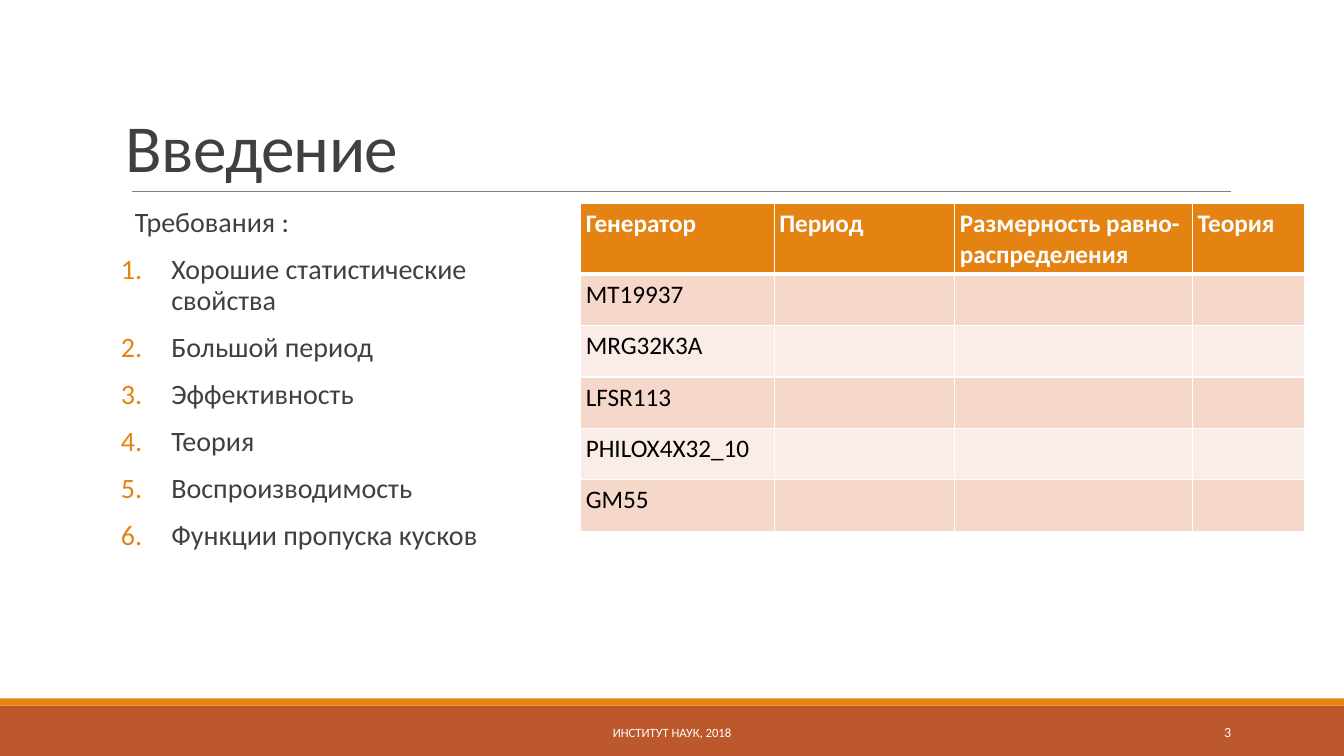
import dataclasses

import pptx
import pptx.dml.color
import pptx.enum.shapes
import pptx.enum.text
import pptx.oxml.ns
import pptx.util
from lxml import etree

TITLE = "Введение"
INTRO = "Требования :"
REQUIREMENTS = [
    "Хорошие статистические свойства",
    "Большой период",
    "Эффективность",
    "Теория",
    "Воспроизводимость",
    "Функции пропуска кусков",
]
HEADERS = ["Генератор", "Период", "Размерность равно-распределения", "Теория"]
GENERATORS = ["MT19937", "MRG32K3A", "LFSR113", "PHILOX4X32_10", "GM55"]
FOOTER = "ИНСТИТУТ НАУК, 2018"
PAGE_NUMBER = "3"

WIDTH, HEIGHT = 13.33, 7.5
LEFT = 1.2
RULE_Y = 1.9
BAR_TOP, STRIPE = 7, 0.07
COLUMN_WIDTHS = [1.92, 1.79, 2.36, 1.11]
HEADER_ROW, BODY_ROW = 0.7, 0.51
INSET = 0.05


@dataclasses.dataclass(frozen=True)
class Theme:
    font: str = "Calibri"
    accent: str = "E48312"
    bar: str = "BD582C"
    rule: str = "808080"
    ink: str = "404040"
    black: str = "000000"
    white: str = "FFFFFF"
    bands: tuple = ("F5D8CA", "FAECE6")
    title: int = 48
    body: int = 20
    table: int = 18
    footer: int = 9
    number: int = 10


THEME = Theme()
ALIGN = pptx.enum.text.PP_ALIGN
ANCHOR = pptx.enum.text.MSO_ANCHOR
inches = pptx.util.Inches


def rgb(color):
    return pptx.dml.color.RGBColor.from_string(color)


def add_xml(parent, tag, **attributes):
    return etree.SubElement(parent, pptx.oxml.ns.qn(tag), attributes)


def add_run(paragraph, text, size, color, bold=False):
    run = paragraph.add_run()
    run.text = text
    run.font.name = THEME.font
    run.font.size = pptx.util.Pt(size)
    run.font.bold = bold
    run.font.color.rgb = rgb(color)
    return run


def set_margins(target, inset):
    target.margin_left = target.margin_right = inches(inset)
    target.margin_top = target.margin_bottom = inches(inset)


def add_frame(slide, box, anchor=ANCHOR.TOP, inset=INSET, wrap=True):
    frame = slide.shapes.add_textbox(*map(inches, box)).text_frame
    frame.word_wrap = wrap
    frame.vertical_anchor = anchor
    set_margins(frame, inset)
    return frame


def add_line_of_text(slide, box, text, size, align):
    paragraph = add_frame(slide, box, ANCHOR.MIDDLE, wrap=align == ALIGN.CENTER).paragraphs[0]
    paragraph.alignment = align
    add_run(paragraph, text, size, THEME.white)


def add_bar(slide, top, height, color):
    bar = slide.shapes.add_shape(
        pptx.enum.shapes.MSO_SHAPE.RECTANGLE, 0, inches(top), inches(WIDTH), inches(height))
    bar.shadow.inherit = False
    bar.fill.solid()
    bar.fill.fore_color.rgb = rgb(color)
    bar.line.fill.background()


def add_rule(slide):
    rule = slide.shapes.add_connector(
        pptx.enum.shapes.MSO_CONNECTOR.STRAIGHT,
        inches(1.31), inches(RULE_Y), inches(12.21), inches(RULE_Y))
    rule.line.color.rgb = rgb(THEME.rule)
    rule.line.width = pptx.util.Pt(0.5)
    add_xml(rule._element.spPr, "a:effectLst")


def add_title(slide):
    top = 0.31
    paragraph = add_frame(slide, (LEFT, top, 11, RULE_Y - top), ANCHOR.BOTTOM).paragraphs[0]
    paragraph.line_spacing = 0.85
    run = add_run(paragraph, TITLE, THEME.title, THEME.ink)
    run.font._element.set("spc", "-50")


def add_requirements(slide):
    frame = add_frame(slide, (LEFT, 2.07, 3.76, 4.3), inset=0)
    for index, text in enumerate([INTRO] + REQUIREMENTS):
        paragraph = frame.add_paragraph() if index else frame.paragraphs[0]
        paragraph.line_spacing = 0.9
        paragraph.space_before = pptx.util.Pt(12)
        indent = inches(0.5 if index else 0.1)
        properties = paragraph._p.get_or_add_pPr()
        properties.set("marL", str(indent))
        properties.set("indent", str(-indent))
        if index:
            add_xml(add_xml(properties, "a:buClr"), "a:srgbClr", val=THEME.accent)
            add_xml(properties, "a:buFont", typeface=THEME.font)
            add_xml(properties, "a:buAutoNum", type="arabicPeriod")
        else:
            add_xml(properties, "a:buChar", char=" ")
        add_run(paragraph, text, THEME.body, THEME.ink)


def style_cell(cell, color, bottom_width):
    set_margins(cell, INSET)
    properties = cell._tc.get_or_add_tcPr()
    for side, width in (("L", 1), ("R", 1), ("T", 1), ("B", bottom_width)):
        border = add_xml(properties, f"a:ln{side}", w=str(pptx.util.Pt(width)))
        add_xml(add_xml(border, "a:solidFill"), "a:srgbClr", val=THEME.white)
    cell.fill.solid()
    cell.fill.fore_color.rgb = rgb(color)


def add_generator_table(slide):
    rows = [HEADERS] + [[name] + [""] * (len(HEADERS) - 1) for name in GENERATORS]
    heights = [HEADER_ROW] + [BODY_ROW] * len(GENERATORS)
    table = slide.shapes.add_table(
        len(rows), len(HEADERS), inches(5.76), inches(2.02),
        inches(sum(COLUMN_WIDTHS)), inches(sum(heights))).table
    for column, width in zip(table.columns, COLUMN_WIDTHS):
        column.width = inches(width)
    for index, (texts, height) in enumerate(zip(rows, heights)):
        table.rows[index].height = inches(height)
        header = index == 0
        fill = THEME.accent if header else THEME.bands[(index - 1) % 2]
        for cell, text in zip(table.rows[index].cells, texts):
            style_cell(cell, fill, 3 if header else 1)
            if text:
                add_run(cell.text_frame.paragraphs[0], text, THEME.table,
                        THEME.white if header else THEME.black, header)


def main():
    presentation = pptx.Presentation()
    presentation.slide_width = inches(WIDTH)
    presentation.slide_height = inches(HEIGHT)
    slide = presentation.slides.add_slide(presentation.slide_layouts[6])
    add_bar(slide, BAR_TOP, HEIGHT - BAR_TOP, THEME.bar)
    add_bar(slide, BAR_TOP - STRIPE, STRIPE, THEME.accent)
    add_rule(slide)
    add_line_of_text(slide, (4.08, 7.15, 5.17, 0.23), FOOTER, THEME.footer, ALIGN.CENTER)
    add_title(slide)
    add_generator_table(slide)
    add_line_of_text(slide, (12.08, 7.14, 0.18, 0.25), PAGE_NUMBER, THEME.number, ALIGN.RIGHT)
    add_requirements(slide)
    presentation.save("out.pptx")


if __name__ == "__main__":
    main()
